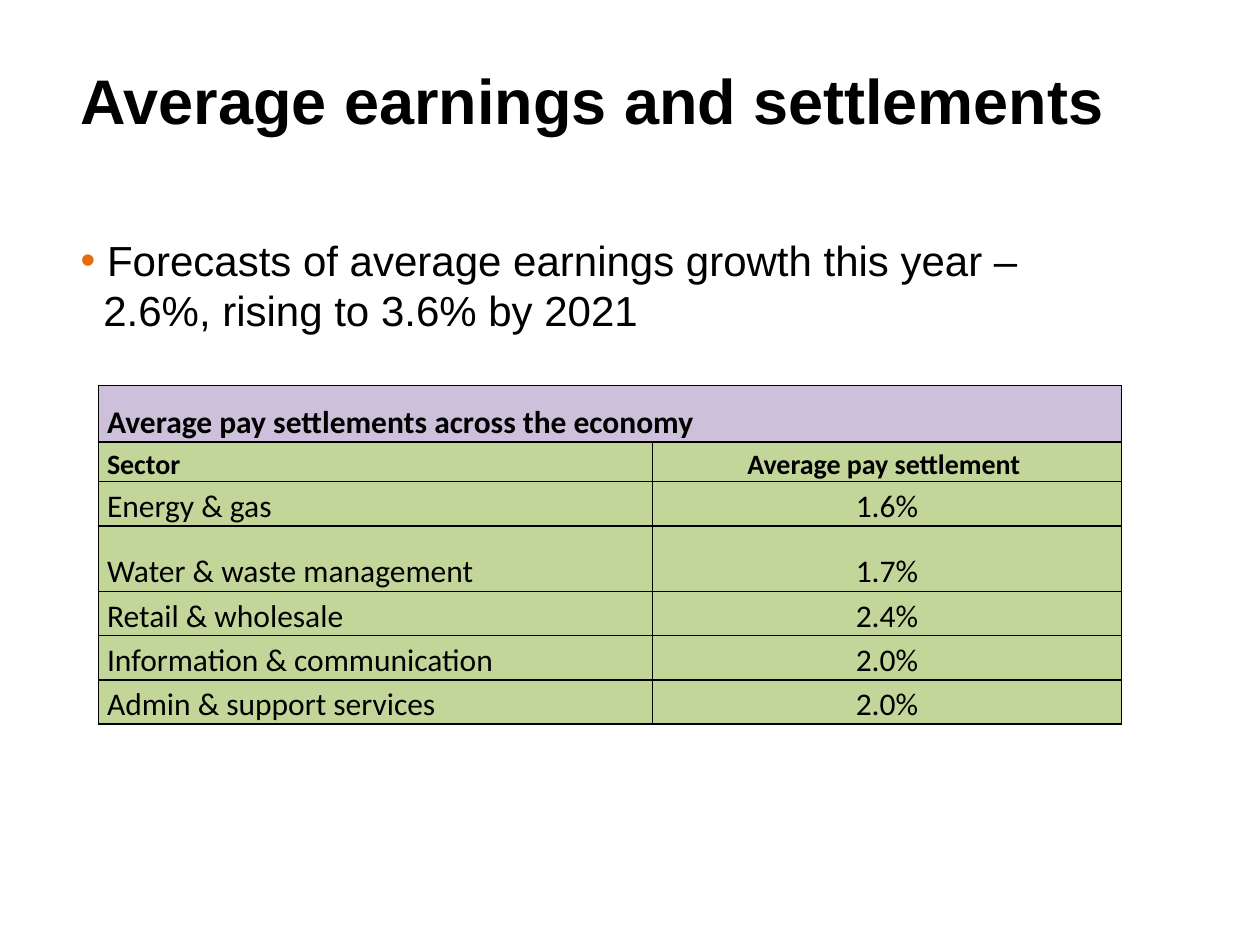
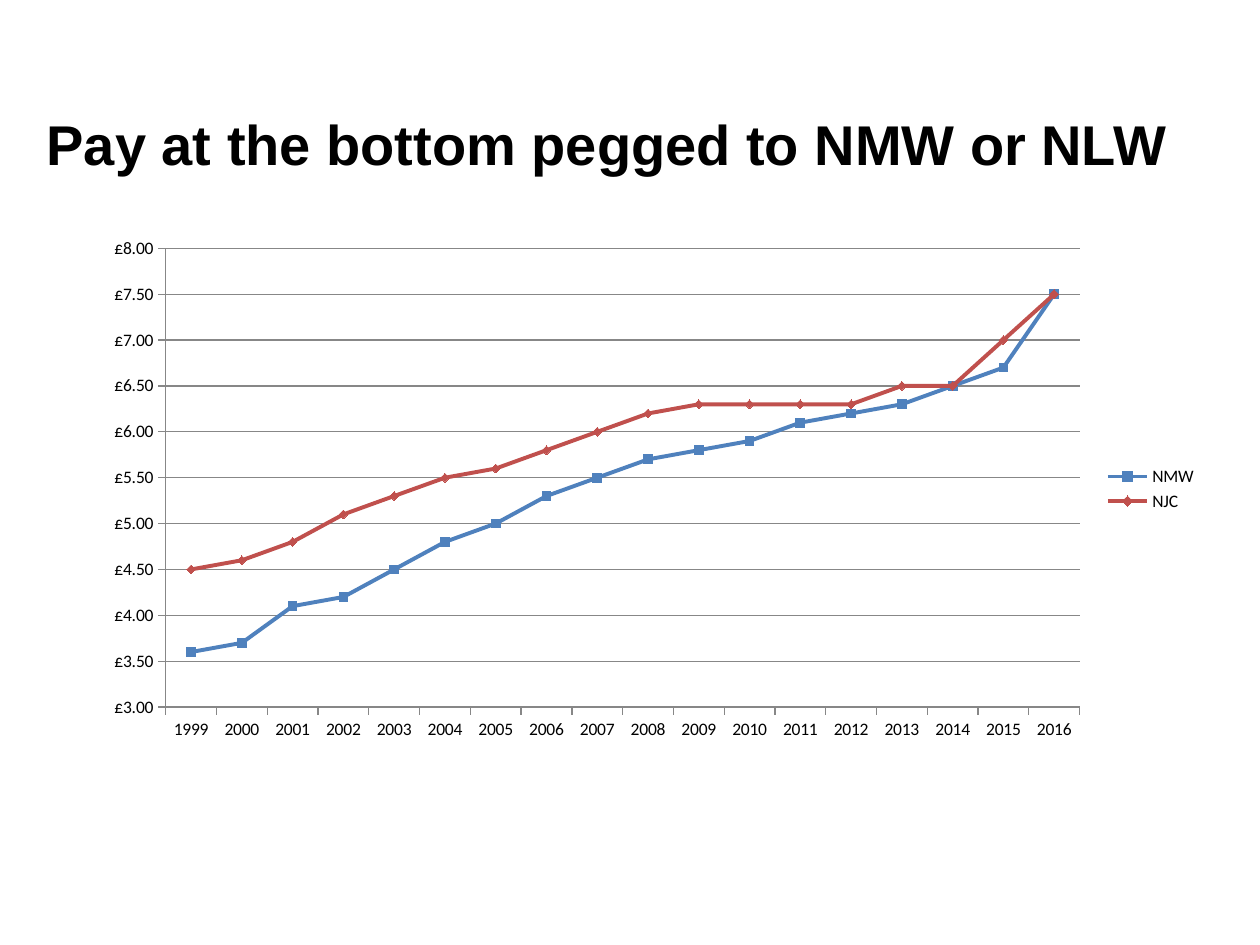
from lxml import etree
from pptx import Presentation
from pptx.chart.data import CategoryChartData
from pptx.dml.color import RGBColor
from pptx.enum.chart import XL_CHART_TYPE, XL_LEGEND_POSITION, XL_MARKER_STYLE as MARKER, XL_TICK_MARK
from pptx.enum.text import MSO_ANCHOR, MSO_AUTO_SIZE, PP_ALIGN
from pptx.oxml import parse_xml
from pptx.oxml.ns import nsdecls, qn
from pptx.util import Inches, Pt

COLORS = {
    "text": "000000",
    "bullet": "E46C0A",
    "caption": "CCC0DA",
    "row": "C2D69A",
    "grid": "878787",
    "nmw": "4F81BD",
    "njc": "C0504D",
}


def rgb(name):
    return RGBColor.from_string(COLORS[name])


def fill_placeholder(ph, box, lines, size, bold):
    """Move a text placeholder to box and write one left-aligned paragraph per line."""
    ph.left, ph.top, ph.width, ph.height = map(Inches, box)
    tf = ph.text_frame
    tf.text = "\n".join(lines)
    for name, value in {"vertical_anchor": MSO_ANCHOR.TOP, "word_wrap": True,
                        "auto_size": MSO_AUTO_SIZE.NONE}.items():
        setattr(tf, name, value)
    for p in tf.paragraphs:
        p.alignment = PP_ALIGN.LEFT
        p.space_before = Pt(0)
        r = p.runs[0]
        for name, value in {"name": "Arial", "size": Pt(size), "bold": bold}.items():
            setattr(r.font, name, value)
        r.font.color.rgb = rgb("text")
    return tf


prs = Presentation()
prs.slide_width, prs.slide_height = Inches(10), Inches(7.5)

# Slide 1: earnings forecast and settlements table
s = prs.slides.add_slide(prs.slide_layouts[1])
fill_placeholder(s.shapes.title, (0.54, 0.44, 8.9, 1.25),
                 ["Average earnings and settlements"], 36, True)
tf = fill_placeholder(s.placeholders[1], (0.54, 1.81, 8.9, 4.14),
                      ["Forecasts of average earnings growth this year –",
                       "2.6%, rising to 3.6% by 2021"], 24, False)
forecast, continuation = tf.paragraphs
for p, margin, indent in ((forecast, 0.21, -0.21), (continuation, 0.18, 0)):
    pPr = p._p.get_or_add_pPr()
    pPr.set("marL", str(Inches(margin)))
    pPr.set("indent", str(Inches(indent)))
pPr = forecast._p.get_or_add_pPr()
color = etree.SubElement(etree.SubElement(pPr, qn("a:buClr")), qn("a:srgbClr"))
color.set("val", COLORS["bullet"])
etree.SubElement(pPr, qn("a:buChar")).set("char", "•")
etree.SubElement(continuation._p.get_or_add_pPr(), qn("a:buNone"))

settlements = [
    ("Average pay settlements across the economy", ""),
    ("Sector", "Average pay settlement "),
    ("Energy & gas", "1.6%"),
    ("Water & waste management", "1.7%"),
    ("Retail & wholesale", "2.4%"),
    ("Information & communication", "2.0%"),
    ("Admin & support services", "2.0%"),
]
row_heights = [0.45, 0.31, 0.31, 0.52, 0.31, 0.31, 0.31]
table = s.shapes.add_table(len(settlements), 2, Inches(0.78), Inches(3.06),
                           Inches(8.12), Inches(sum(row_heights))).table
table.first_row = table.horz_banding = False
for column, width in zip(table.columns, (4.4, 3.72)):
    column.width = Inches(width)
table.cell(0, 0).merge(table.cell(0, 1))

cell_format = {"vertical_anchor": MSO_ANCHOR.BOTTOM, "margin_left": Inches(0.07),
               "margin_right": Inches(0.07), "margin_top": 0, "margin_bottom": 0}
for i, (texts, height) in enumerate(zip(settlements, row_heights)):
    table.rows[i].height = Inches(height)
    for j, text in enumerate(texts):
        cell = table.cell(i, j)
        for name, value in cell_format.items():
            setattr(cell, name, value)
        cell.fill.solid()
        cell.fill.fore_color.rgb = rgb("caption" if i == 0 else "row")
        for k, side in enumerate(("lnL", "lnR", "lnT", "lnB")):
            cell._tc.get_or_add_tcPr().insert(k, parse_xml(
                f'<a:{side} {nsdecls("a")} w="{Pt(1)}"><a:solidFill>'
                f'<a:srgbClr val="{COLORS["text"]}"/></a:solidFill></a:{side}>'))
        if cell.is_spanned:
            continue
        p = cell.text_frame.paragraphs[0]
        p.line_spacing = 1.15
        p.alignment = PP_ALIGN.CENTER if j else PP_ALIGN.LEFT
        r = p.add_run()
        r.text = text
        for name, value in {"name": "Calibri", "size": Pt(16 if i == 1 else 18),
                            "bold": i < 2}.items():
            setattr(r.font, name, value)
        r.font.color.rgb = rgb("text")

# Slide 2: minimum wage against the lowest council pay rate
s = prs.slides.add_slide(prs.slide_layouts[5])
fill_placeholder(s.shapes.title, (0.27, 0.82, 9.36, 0.74),
                 ["Pay at the bottom pegged to NMW or NLW"], 32, True)

data = CategoryChartData(number_format='"£"#,##0.00')
data.categories = [str(year) for year in range(1999, 2017)]
data.add_series("NMW ", [3.6, 3.7, 4.1, 4.2, 4.5, 4.8, 5, 5.3, 5.5,
                         5.7, 5.8, 5.9, 6.1, 6.2, 6.3, 6.5, 6.7, 7.5])
data.add_series("NJC ", [4.5, 4.6, 4.8, 5.1, 5.3, 5.5, 5.6, 5.8, 6,
                         6.2, 6.3, 6.3, 6.3, 6.3, 6.5, 6.5, 7, 7.5])
chart = s.shapes.add_chart(XL_CHART_TYPE.LINE_MARKERS, Inches(0.73), Inches(1.81),
                           Inches(8.9), Inches(4.14), data).chart
chart.has_title = False
chart.font.name, chart.font.size = "Calibri", Pt(10)
chart.font.color.rgb = rgb("text")
chart.has_legend = True
chart.legend.position = XL_LEGEND_POSITION.RIGHT
chart.legend.include_in_layout = False

years, pay = chart.category_axis, chart.value_axis
for name, value in {"minimum_scale": 3, "maximum_scale": 8, "major_unit": 0.5,
                    "has_major_gridlines": True}.items():
    setattr(pay, name, value)
pay.tick_labels.number_format = '"£"#,##0.00'
pay.tick_labels.number_format_is_linked = False
for axis in (years, pay):
    axis.major_tick_mark = XL_TICK_MARK.OUTSIDE
    axis.minor_tick_mark = XL_TICK_MARK.NONE
for line in (years.format.line, pay.format.line, pay.major_gridlines.format.line):
    line.color.rgb = rgb("grid")
    line.width = Pt(0.75)

plot = chart.plots[0]
plot.vary_by_categories = False
styles = (("nmw", MARKER.SQUARE), ("njc", MARKER.DIAMOND))
for series, (name, marker) in zip(plot.series, styles):
    series.smooth = False
    series.format.line.color.rgb = rgb(name)
    series.format.line.width = Pt(2.25)
    series.marker.style, series.marker.size = marker, 5
    series.marker.format.fill.solid()
    series.marker.format.fill.fore_color.rgb = rgb(name)
    series.marker.format.line.color.rgb = rgb(name)

prs.save("out.pptx")
